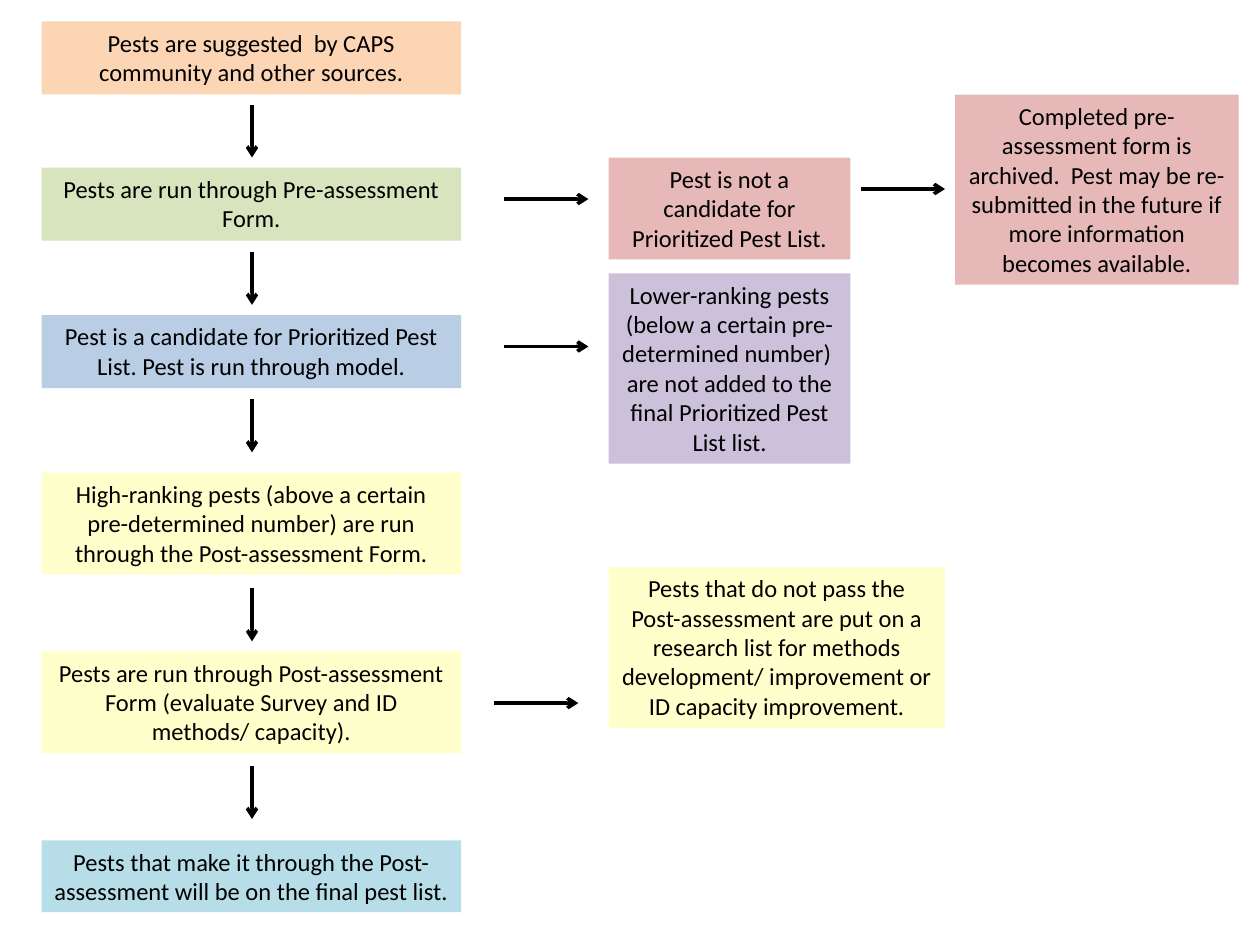
import pptx
import pptx.dml.color
import pptx.enum.shapes
import pptx.enum.text
import pptx.oxml
import pptx.oxml.ns
import pptx.util
from pptx.dml.color import RGBColor
from pptx.util import Inches

BLACK = RGBColor(0x00, 0x00, 0x00)
ORANGE = RGBColor(0xFC, 0xD5, 0xB5)
GREEN = RGBColor(0xD7, 0xE4, 0xBD)
BLUE = RGBColor(0xB9, 0xCD, 0xE5)
PINK = RGBColor(0xE6, 0xB9, 0xB8)
PURPLE = RGBColor(0xCC, 0xC1, 0xDA)
YELLOW = RGBColor(0xFF, 0xFF, 0xCC)
TEAL = RGBColor(0xB7, 0xDE, 0xE8)

FONT_FORMAT = {"name": "Calibri", "size": pptx.util.Pt(14)}
FRAME_FORMAT = {
    "word_wrap": True,
    "auto_size": pptx.enum.text.MSO_AUTO_SIZE.SHAPE_TO_FIT_TEXT,
}

MAIN_LEFT, MAIN_WIDTH = 0.33, 3.33
SIDE_LEFT, SIDE_WIDTH = 4.83, 1.92
MAIN_CENTER = 2
DOWN_LENGTH, RIGHT_LENGTH = 0.42, 0.67

main_steps = [
    (0.17, 0.58, ORANGE, "Pests are suggested  by CAPS community and other sources."),
    (1.33, 0.58, GREEN, "Pests are run through Pre-assessment Form."),
    (2.5, 0.58, BLUE, "Pest is a candidate for Prioritized Pest List. Pest is run through model."),
    (3.75, 0.81, YELLOW, "High-ranking pests (above a certain pre-determined number) are run "
                         "through the Post-assessment Form."),
    (5.17, 0.81, YELLOW, "Pests are run through Post-assessment Form (evaluate Survey and ID "
                         "methods/ capacity)."),
    (6.67, 0.57, TEAL, "Pests that make it through the Post-assessment will be on the final pest list."),
]
side_outcomes = [
    (SIDE_LEFT, 1.25, SIDE_WIDTH, 0.81, PINK, "Pest is not a candidate for Prioritized Pest List."),
    (7.58, 0.75, 2.25, 1.51, PINK, "Completed pre-assessment form is archived.  Pest may be re-submitted "
                                   "in the future if more information becomes available."),
    (SIDE_LEFT, 2.17, SIDE_WIDTH, 1.51, PURPLE, "Lower-ranking pests (below a certain pre-determined number)  "
                                                "are not added to the final Prioritized Pest List list."),
    (SIDE_LEFT, 4.5, 2.67, 1.28, YELLOW, "Pests that do not pass the Post-assessment are put on a research list "
                                         "for methods development/ improvement or ID capacity improvement."),
]
boxes = [(MAIN_LEFT, top, MAIN_WIDTH, height, color, text)
         for top, height, color, text in main_steps] + side_outcomes

down_starts = [0.83, 2, 3.17, 4.67, 6.08]
right_starts = [(4, 1.58), (6.83, 1.5), (4, 2.75), (3.92, 5.58)]
arrows = [(MAIN_CENTER, top, MAIN_CENTER, top + DOWN_LENGTH) for top in down_starts]
arrows += [(left, top, left + RIGHT_LENGTH, top) for left, top in right_starts]

presentation = pptx.Presentation()
presentation.slide_width = Inches(10)
presentation.slide_height = Inches(7.5)
slide = presentation.slides.add_slide(presentation.slide_layouts[6])

for left, top, width, height, color, text in boxes:
    shape = slide.shapes.add_textbox(Inches(left), Inches(top), Inches(width), Inches(height))
    shape.fill.solid()
    shape.fill.fore_color.rgb = color
    for name, value in FRAME_FORMAT.items():
        setattr(shape.text_frame, name, value)
    paragraph = shape.text_frame.paragraphs[0]
    paragraph.alignment = pptx.enum.text.PP_ALIGN.CENTER
    run = paragraph.add_run()
    run.text = text
    for name, value in FONT_FORMAT.items():
        setattr(run.font, name, value)
    run.font.color.rgb = BLACK

for arrow in arrows:
    connector = slide.shapes.add_connector(
        pptx.enum.shapes.MSO_CONNECTOR.STRAIGHT, *[Inches(value) for value in arrow])
    connector.line.color.rgb = BLACK
    connector.line.width = pptx.util.Pt(2)
    tail = pptx.oxml.parse_xml(f'<a:tailEnd {pptx.oxml.ns.nsdecls("a")} type="arrow"/>')
    connector.line._get_or_add_ln().append(tail)
    effects = pptx.oxml.parse_xml(f'<a:effectLst {pptx.oxml.ns.nsdecls("a")}/>')
    connector._element.spPr.append(effects)

presentation.save("out.pptx")
